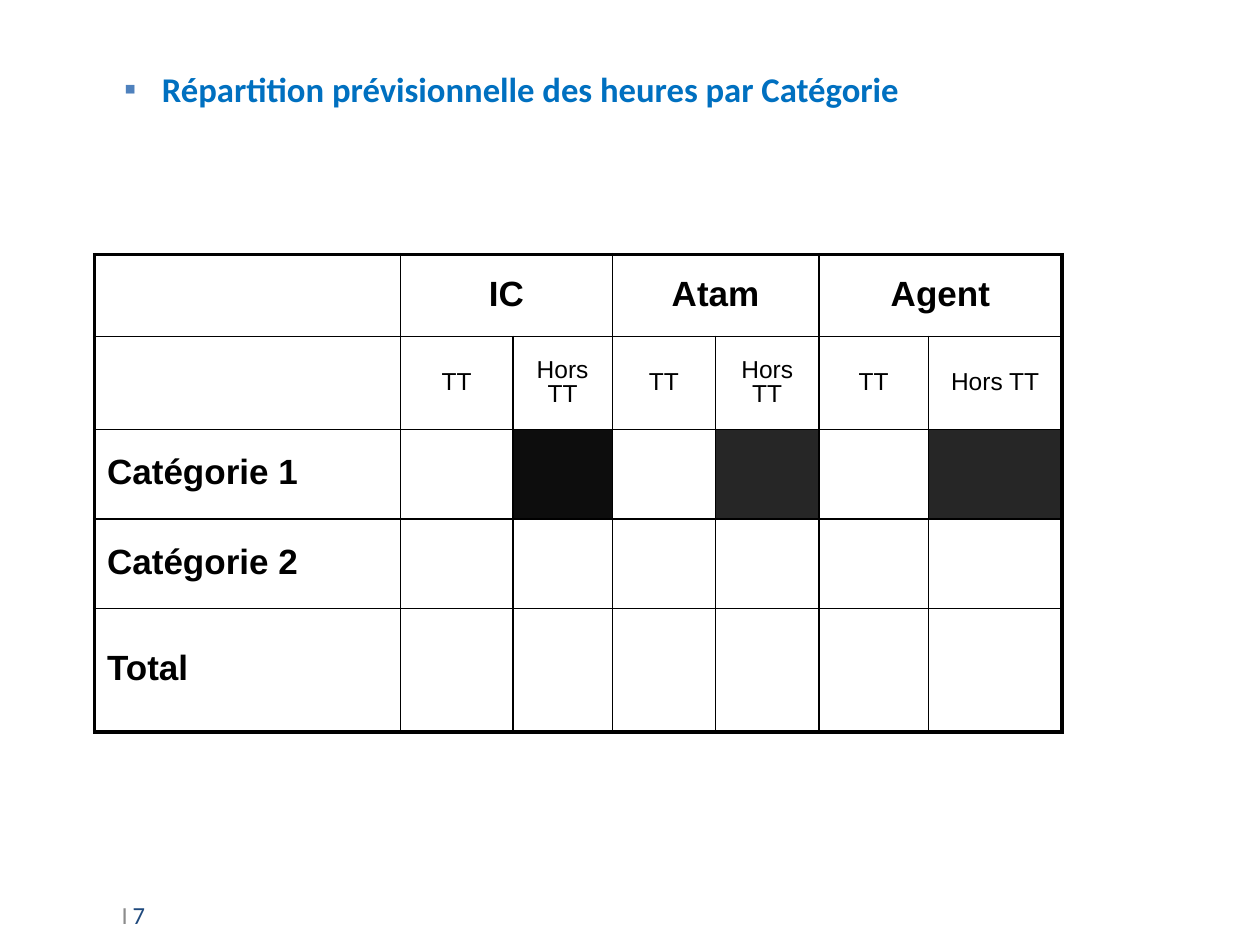
"""Build the slide showing planned hours by category."""
import pptx
import pptx.dml.color
import pptx.enum.text
import pptx.oxml
import pptx.oxml.ns
import pptx.util

Inches = pptx.util.Inches
Pt = pptx.util.Pt
CENTER = pptx.enum.text.PP_ALIGN.CENTER
LEFT = pptx.enum.text.PP_ALIGN.LEFT
MIDDLE = pptx.enum.text.MSO_ANCHOR.MIDDLE
COLORS = {
    "text": "000000", "border": "000000", "paper": "FFFFFF",
    "title": "0070C0", "bullet": "4F81BD", "bar": "8C8C8C",
    "number": "1F497D", "black": "0D0D0D", "dark": "262626",
}
NAMESPACE = pptx.oxml.ns.nsdecls("a")


def style_span(span, font, size, color, bold=False):
    span.font.name = font
    span.font.size = Pt(size)
    span.font.bold = bold
    span.font.color.rgb = pptx.dml.color.RGBColor.from_string(COLORS[color])


def add_box(left, top, width, height):
    box = slide.shapes.add_textbox(Inches(left), Inches(top), Inches(width), Inches(height))
    box.text_frame.word_wrap = True
    box.text_frame.vertical_anchor = MIDDLE
    return box


deck = pptx.Presentation()
deck.slide_width = Inches(10)
deck.slide_height = Inches(7.5)
slide = deck.slides.add_slide(deck.slide_layouts[6])

title_box = add_box(0.59, 0.52, 6.94, 0.37)
para = title_box.text_frame.paragraphs[0]
para.text = "Répartition prévisionnelle des heures par Catégorie"
para.alignment = CENTER
style_span(para.runs[0], "Calibri", 19.8, "title", True)
properties = para._p.get_or_add_pPr()
properties.set("marL", str(Inches(0.3)))
properties.set("indent", str(-Inches(0.3)))
for bullet_part in (
    f'<a:buClr {NAMESPACE}><a:srgbClr val="{COLORS["bullet"]}"/></a:buClr>',
    f'<a:buFont {NAMESPACE} typeface="Arial"/>',
    f'<a:buChar {NAMESPACE} char="▪"/>',
):
    properties.append(pptx.oxml.parse_xml(bullet_part))

column_widths = [2.43, 0.89, 0.79, 0.82, 0.82, 0.87, 1.06]
row_heights = [0.65, 0.74, 0.71, 0.71, 0.98]
labels = [
    ["", "IC", "", "Atam", "", "Agent", ""],
    [""] + ["TT", "Hors TT"] * 3,
    ["Catégorie 1"],
    ["Catégorie 2"],
    ["Total"],
]
blocked_cells = {(2, 2): "black", (2, 4): "dark", (2, 6): "dark"}
last_row = len(row_heights) - 1
last_column = len(column_widths) - 1

table = slide.shapes.add_table(
    len(row_heights), len(column_widths), Inches(0.75), Inches(2.02),
    Inches(sum(column_widths)), Inches(sum(row_heights)),
).table
for column, width in zip(table.columns, column_widths):
    column.width = Inches(width)
for row, height in zip(table.rows, row_heights):
    row.height = Inches(height)
for start in (1, 3, 5):
    table.cell(0, start).merge(table.cell(0, start + 1))

for row_index in range(last_row + 1):
    for column_index in range(last_column + 1):
        cell = table.cell(row_index, column_index)
        fill_name = blocked_cells.get((row_index, column_index), "paper")
        cell.fill.solid()
        cell.fill.fore_color.rgb = pptx.dml.color.RGBColor.from_string(COLORS[fill_name])
        cell.vertical_anchor = MIDDLE
        right_column = column_index + cell.span_width - 1 if cell.is_merge_origin else column_index
        outer_sides = {
            "lnL": column_index == 0,
            "lnR": right_column == last_column,
            "lnT": row_index == 0,
            "lnB": row_index == last_row,
        }
        for position, (side, is_outer) in enumerate(outer_sides.items()):
            line_width = Pt(2.25 if is_outer else 1)
            border = pptx.oxml.parse_xml(
                f'<a:{side} {NAMESPACE} w="{line_width}"><a:solidFill>'
                f'<a:srgbClr val="{COLORS["border"]}"/></a:solidFill></a:{side}>'
            )
            cell._tc.get_or_add_tcPr().insert(position, border)

    for column_index, label in enumerate(labels[row_index]):
        if label:
            para = table.cell(row_index, column_index).text_frame.paragraphs[0]
            para.text = label
            para.alignment = CENTER if column_index else LEFT
            para.line_spacing = 0.9
            is_subheading = row_index == 1
            style_span(para.runs[0], "Arial", 14 if is_subheading else 20, "text", not is_subheading)

number_box = add_box(0.83, 7, 1, 0.52)
para = number_box.text_frame.paragraphs[0]
for text, size, color in ((" ", 12, "bar"), ("I", 14, "bar"), (" ", 12, "bar"), ("7", 14, "number")):
    span = para.add_run()
    span.text = text
    style_span(span, "Calibri", size, color)

deck.save("out.pptx")
